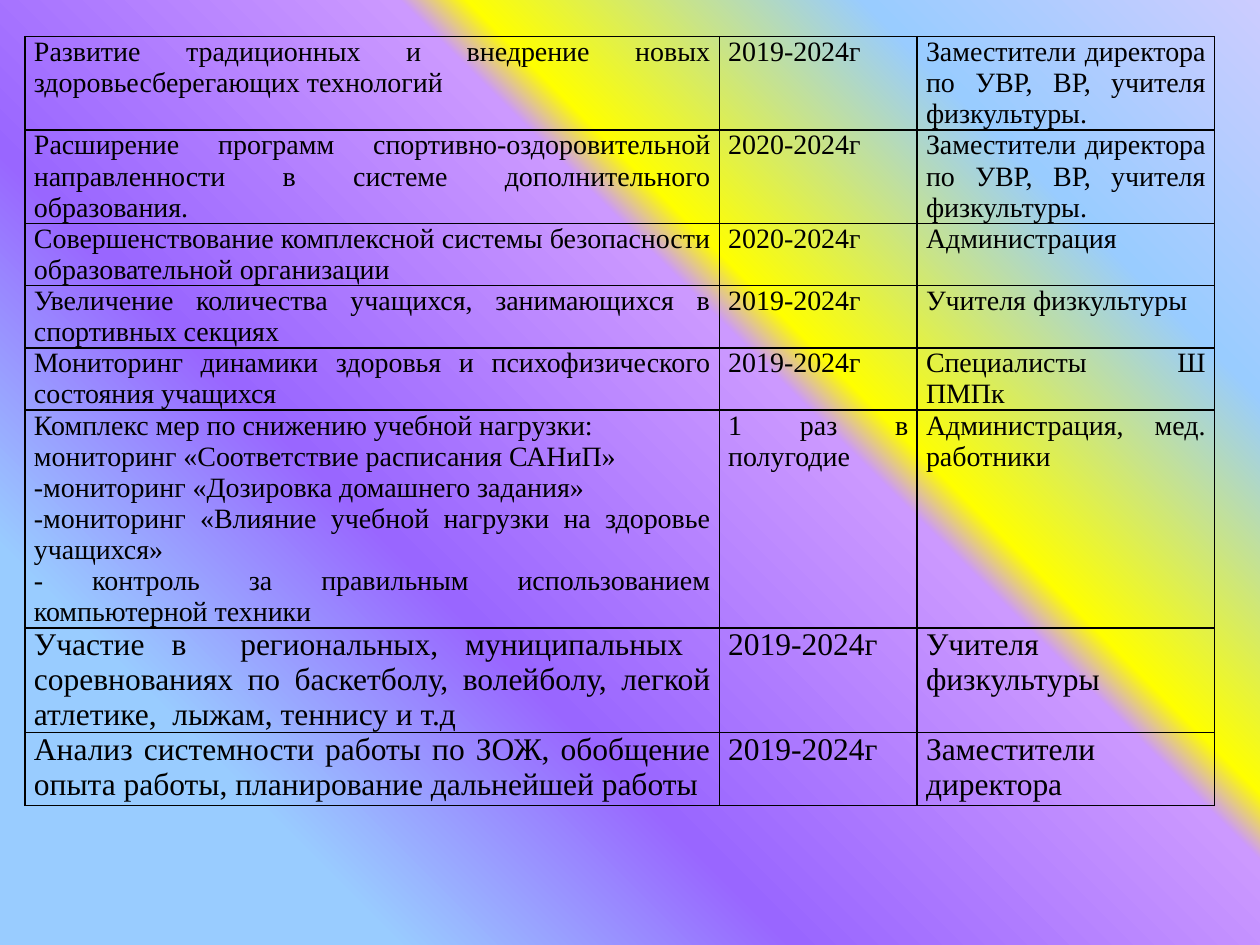
from dataclasses import dataclass

from lxml import etree
from pptx import Presentation
from pptx import util as u
from pptx.dml import color
from pptx.enum import text
from pptx.oxml import ns


@dataclass(frozen=True)
class Theme:
    font: str = "Times New Roman"
    ink: str = "000000"
    body: int = 16
    large: int = 18
    border: float = 1
    gradient: tuple = ((18, "99CCFF"), (36, "9966FF"), (61, "CC99FF"),
                       (64, "FFFF00"), (82, "99CCFF"), (100, "CCCCFF"))
    gradient_angle: int = 45  # counter-clockwise


@dataclass(frozen=True)
class Measure:
    height: float
    action: str
    period: str
    responsible: str
    size: int = Theme.body


THEME = Theme()
COLUMN_WIDTHS = (5.51, 1.57, 2.36)
MEASURES = (
    Measure(0.63, "Развитие традиционных и внедрение новых здоровьесберегающих технологий",
            "2019-2024г", "Заместители директора по УВР, ВР, учителя физкультуры."),
    Measure(0.58, "Расширение программ спортивно-оздоровительной направленности "
            "в системе дополнительного образования.",
            "2020-2024г", "Заместители директора по УВР, ВР, учителя физкультуры."),
    Measure(0.39, "Совершенствование комплексной системы безопасности образовательной организации",
            "2020-2024г", "Администрация"),
    Measure(0.21, "Увеличение количества учащихся, занимающихся в спортивных секциях",
            "2019-2024г", "Учителя физкультуры"),
    Measure(0.18, "Мониторинг динамики здоровья и психофизического состояния учащихся",
            "2019-2024г", "Специалисты Ш ПМПк"),
    Measure(1.03, "Комплекс мер по снижению учебной нагрузки:\n"
            "мониторинг «Соответствие расписания САНиП»\n"
            "-мониторинг «Дозировка домашнего задания»\n"
            "-мониторинг «Влияние учебной нагрузки на здоровье учащихся»\n"
            "- контроль за правильным использованием компьютерной техники",
            "1 раз в полугодие", "Администрация, мед. работники"),
    Measure(0.39, "Участие в  региональных, муниципальных  соревнованиях по баскетболу, "
            "волейболу, легкой атлетике,  лыжам, теннису и т.д",
            "2019-2024г", "Учителя физкультуры", THEME.large),
    Measure(0.58, "Анализ системности работы по ЗОЖ, обобщение опыта работы, "
            "планирование дальнейшей работы",
            "2019-2024г", "Заместители директора", THEME.large),
)


def apply_format(target, values: dict) -> None:
    for attribute, value in values.items():
        setattr(target, attribute, value)


def add_color(parent, rgb: str) -> None:
    etree.SubElement(parent, ns.qn("a:srgbClr"), val=rgb)


def paint_background(slide) -> None:
    fill = slide.background.fill
    fill.gradient()
    fill.gradient_angle = THEME.gradient_angle
    stops = slide.element.xpath(".//a:gsLst")[0]
    for default_stop in list(stops):
        stops.remove(default_stop)
    for position, rgb in THEME.gradient:
        add_color(etree.SubElement(stops, ns.qn("a:gs"), pos=str(position * 1000)), rgb)


def draw_borders(cell) -> None:
    properties = cell._tc.get_or_add_tcPr()
    for index, side in enumerate("LRTB"):
        line = etree.Element(ns.qn(f"a:ln{side}"), w=str(u.Pt(THEME.border)))
        add_color(etree.SubElement(line, ns.qn("a:solidFill")), THEME.ink)
        properties.insert(index, line)  # borders precede the fill


def fill_cell(cell, wording: str, size: int) -> None:
    cell.fill.background()
    apply_format(cell, {
        "margin_left": u.Inches(0.07), "margin_right": u.Inches(0.07),
        "margin_top": 0, "margin_bottom": 0,
    })
    cell.text_frame.text = wording
    for paragraph in cell.text_frame.paragraphs:
        paragraph.alignment = text.PP_ALIGN.JUSTIFY
        for run in paragraph.runs:
            apply_format(run.font, {"name": THEME.font, "size": u.Pt(size), "bold": False})
            run.font.color.rgb = color.RGBColor.from_string(THEME.ink)
    draw_borders(cell)


def add_plan(slide) -> None:
    height = u.Inches(6.57)
    frame = slide.shapes.add_table(
        len(MEASURES), len(COLUMN_WIDTHS),
        u.Inches(0.2), u.Inches(0.29), u.Inches(sum(COLUMN_WIDTHS)), height)
    plan = frame.table
    apply_format(plan, {"first_row": False, "horz_banding": False})
    for column, width in zip(plan.columns, COLUMN_WIDTHS):
        column.width = u.Inches(width)
    for row, measure in zip(plan.rows, MEASURES):
        row.height = u.Inches(measure.height)
        wordings = (measure.action, measure.period, measure.responsible)
        for cell, wording in zip(row.cells, wordings):
            fill_cell(cell, wording, measure.size)
    frame.height = height  # rows grow with their text


def main() -> None:
    deck = Presentation()
    apply_format(deck, {"slide_width": u.Inches(10), "slide_height": u.Inches(7.5)})
    slide = deck.slides.add_slide(deck.slide_layouts[6])  # blank: no title here
    paint_background(slide)
    add_plan(slide)
    deck.save("out.pptx")


if __name__ == "__main__":
    main()
